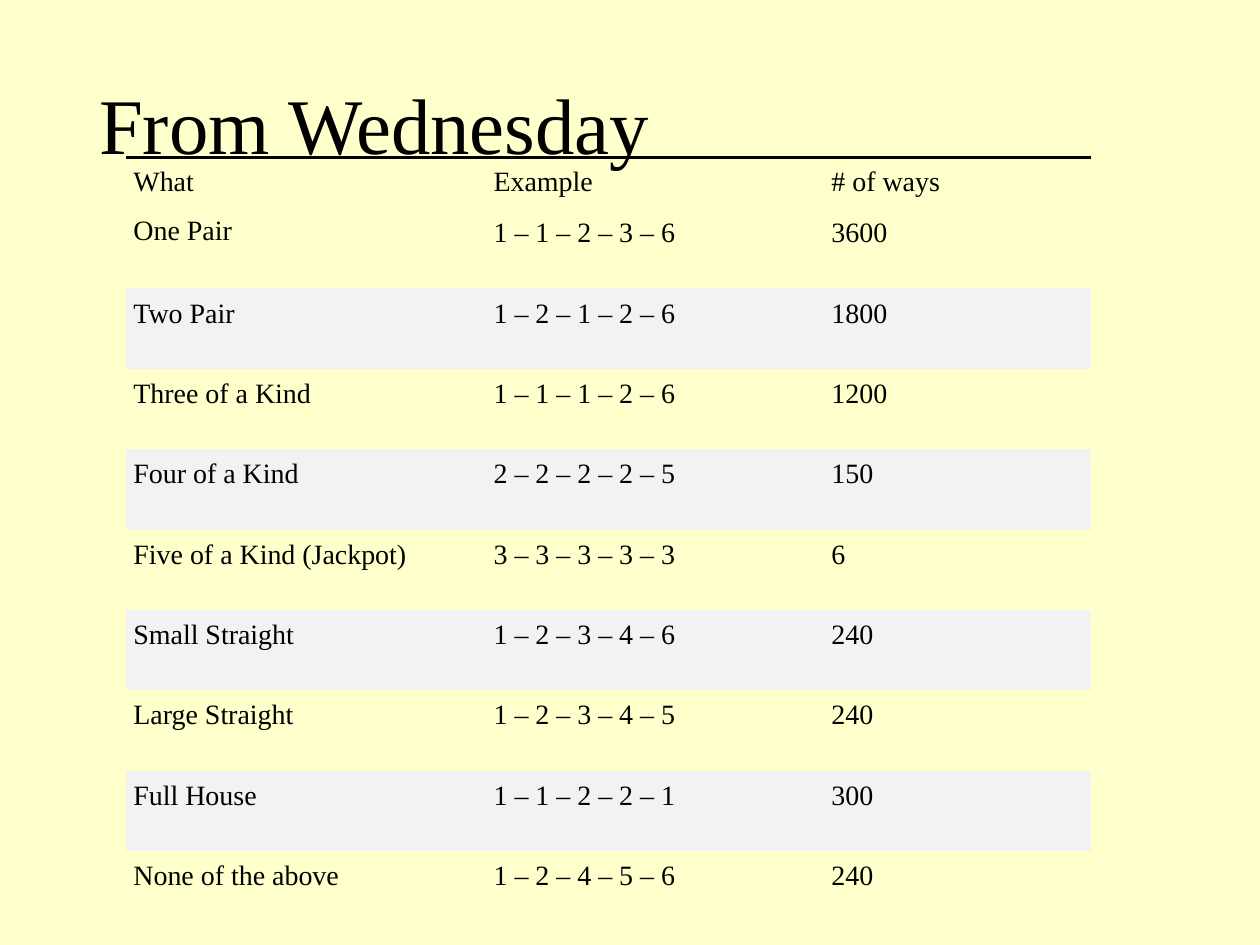
from typing import NamedTuple

from lxml.etree import SubElement
from pptx import Presentation
from pptx.dml.color import RGBColor
from pptx.enum.text import MSO_ANCHOR
from pptx.oxml import parse_xml
from pptx.oxml.ns import nsdecls, qn
from pptx.util import Cm, Pt

COLORS = {"page": "FFFFCC", "text": "000000", "rule": "000000", "band": "F2F2F2"}
FONT = "Times New Roman"
TITLE_FORMAT = {"name": FONT, "size": Pt(45)}
CELL_FORMAT = {"name": FONT, "size": Pt(16)}
CELL_LAYOUT = {
    "margin_left": Cm(0.15),
    "margin_right": Cm(0.15),
    "margin_top": Cm(0.15),
    "margin_bottom": Cm(0.15),
    "vertical_anchor": MSO_ANCHOR.TOP,
}
COL_WIDTHS = [Cm(7.26), Cm(6.81), Cm(5.38)]
HEADER_HEIGHT, ROW_HEIGHT = Cm(0.95), Cm(1.62)
PLAIN_TABLE_STYLE = "{2D5ABB26-0587-4C30-8999-92F81FD0307C}"


class Roll(NamedTuple):
    what: str
    example: str
    ways: str
    name_spacing: float = 1.07


ROLLS = [
    Roll("What", "Example", "# of ways"),
    Roll("One Pair", "1 – 1 – 2 – 3 – 6", "3600", 1.0),
    Roll("Two Pair", "1 – 2 – 1 – 2 – 6", "1800"),
    Roll("Three of a Kind", "1 – 1 – 1 – 2 – 6", "1200"),
    Roll("Four of a Kind", "2 – 2 – 2 – 2 – 5", "150"),
    Roll("Five of a Kind (Jackpot)", "3 – 3 – 3 – 3 – 3", "6"),
    Roll("Small Straight", "1 – 2 – 3 – 4 – 6", "240"),
    Roll("Large Straight", "1 – 2 – 3 – 4 – 5", "240"),
    Roll("Full House", "1 – 1 – 2 – 2 – 1", "300"),
    Roll("None of the above", "1 – 2 – 4 – 5 – 6", "240"),
]


def set_all(obj, values: dict) -> None:
    for name, value in values.items():
        setattr(obj, name, value)


def write(tf, text: str, fmt: dict, spacing: float) -> None:
    p = tf.paragraphs[0]
    p.line_spacing = spacing
    r = p.add_run()
    r.text = text
    set_all(r.font, fmt)
    r.font.color.rgb = RGBColor.from_string(COLORS["text"])


def add_top_rule(cell, width: float) -> None:
    line = parse_xml(f'<a:lnT {nsdecls("a")} w="{Pt(width)}"/>')
    fill = SubElement(line, qn("a:solidFill"))
    SubElement(fill, qn("a:srgbClr"), val=COLORS["rule"])
    cell._tc.get_or_add_tcPr().insert(0, line)


def add_title(s, text: str) -> None:
    sp = s.shapes.add_textbox(Cm(1.75), Cm(0.51), Cm(21.9), Cm(4.19))
    tf = sp.text_frame
    set_all(tf, {"word_wrap": True, "vertical_anchor": MSO_ANCHOR.MIDDLE})
    write(tf, text, TITLE_FORMAT, 0.9)


def add_rolls_table(s, rolls: list[Roll]) -> None:
    height = HEADER_HEIGHT + ROW_HEIGHT * (len(rolls) - 1)
    frame = s.shapes.add_table(
        len(rolls), len(COL_WIDTHS), Cm(2.54), Cm(3.17), sum(COL_WIDTHS), height
    )
    table = frame.table
    set_all(table, {"first_row": False, "horz_banding": False})
    table._tbl.tblPr.find(qn("a:tableStyleId")).text = PLAIN_TABLE_STYLE
    for column, width in zip(table.columns, COL_WIDTHS):
        column.width = width

    for i, roll in enumerate(rolls):
        table.rows[i].height = ROW_HEIGHT if i else HEADER_HEIGHT
        spacings = (roll.name_spacing, 1.07, 1.07)
        for j, (text, spacing) in enumerate(zip(roll[:3], spacings)):
            cell = table.cell(i, j)
            set_all(cell, CELL_LAYOUT)
            write(cell.text_frame, text, CELL_FORMAT, spacing)
            # Shade every second hand
            if i and i % 2 == 0:
                cell.fill.solid()
                cell.fill.fore_color.rgb = RGBColor.from_string(COLORS["band"])
            else:
                cell.fill.background()
            if i == 0:
                add_top_rule(cell, 2.25)


def main() -> None:
    prs = Presentation()
    set_all(prs, {"slide_width": Cm(25.4), "slide_height": Cm(19.05)})
    s = prs.slides.add_slide(prs.slide_layouts[6])

    # Page colour
    s.background.fill.solid()
    s.background.fill.fore_color.rgb = RGBColor.from_string(COLORS["page"])

    # Heading and table of dice hands
    add_title(s, "From Wednesday")
    add_rolls_table(s, ROLLS)
    prs.save("out.pptx")


if __name__ == "__main__":
    main()
